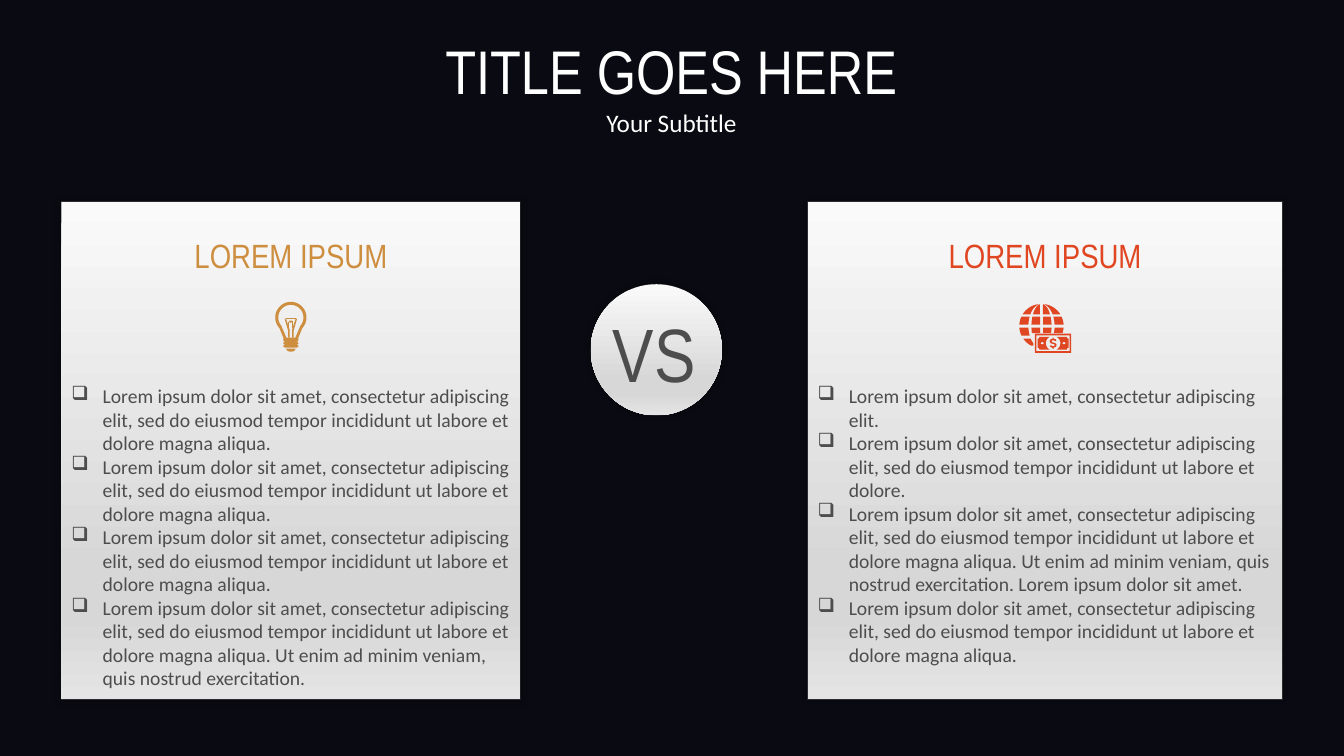
"""Builds a two-panel versus slide with icons and bullet lists."""
import math

from lxml import etree
from pptx import Presentation
from pptx import util as u
from pptx.dml.color import RGBColor
from pptx.enum import shapes, text
from pptx.oxml.ns import qn

COLORS = {"back": "0A0A12", "white": "FFFFFF", "black": "000000", "grey": "4D4D4D",
          "gold": "CE8E40", "red": "E04621"}
SHADES = [(0, "FAFAFA"), (74, "D7D7D7"), (83, "D7D7D7"), (100, "E4E4E4")]
HEAD, BODY = "Arial Narrow", "Calibri"
SIDES = (-1, 1)

SHORT = "Lorem ipsum dolor sit amet, consectetur adipiscing elit"
MEDIUM = SHORT + ", sed do eiusmod tempor incididunt ut labore et dolore"
LONG = MEDIUM + " magna aliqua."
LONGER = LONG + " Ut enim ad minim veniam, quis nostrud exercitation."


def arc(cx, cy, rx, ry, start=0, end=360, steps=32):
    angles = [math.radians(start + (end - start) * i / steps) for i in range(steps + 1)]
    return [(cx + rx * math.cos(a), cy + ry * math.sin(a)) for a in angles]


def box(cx, cy, w, h):
    return [(cx - w, cy - h), (cx + w, cy - h), (cx + w, cy + h), (cx - w, cy + h)]


def bulb():
    right = [(0.75, 2), (0.75, 2.3), (0.6, 2.4), (0.75, 2.5), (0.75, 2.6),
             (0.6, 2.7), (0.75, 2.8), (0.75, 2.9), (0.55, 3)]
    left = [(-x, y) for x, y in reversed(right)]
    glass = arc(0, 0, 1.55, 1.55, 137, 403) + right + left
    hollow = arc(0, 0, 1.25, 1.25, 140, 400) + [(0.45, 2), (-0.45, 2)]
    wire = [(0.62, 0.1), (0.48, 0.1), (0.12, 1.2), (0.12, 2), (0.28, 2), (0.28, 1.3)]
    stem = [(0.14, 0.4), (0.24, 0.4), (0.24, 1), (0.14, 1)]
    pieces = [[glass, hollow], [arc(0, 3.1, 0.45, 0.3, 0, 180)],
              [arc(0, 0.4, 0.2, 0.1)], [box(0, 0.12, 0.5, 0.05)]]
    return pieces + [[[(side * x, y) for x, y in part]]
                     for side in SIDES for part in (wire, stem)]


def globe_cell(top, bottom, side, outer, limit=9):
    ys = [top + (bottom - top) * i / 12 for i in range(13)]
    bend = [math.sqrt(1 - (y / 2.2) ** 2) for y in ys]
    near = [1.3 * b if outer else 0.15 for b in bend]
    far = [(2.2 if outer else 1) * b for b in bend]
    edge = list(zip(near, ys)) + list(zip(far, ys))[::-1]
    return [[(min(side * x, limit), y) for x, y in edge]]


def globe_and_bill():
    pieces = [globe_cell(top, 0.95 if top > 0 and outer and side < 0 else bottom, side, outer)
              for top, bottom in ((-2.15, -1.15), (-0.95, -0.15), (0.15, 0.7))
              for side in SIDES for outer in (False, True)]
    pieces.append(globe_cell(1.25, 1.95, -1, True, -0.8))
    cx, cy = 1.15, 1.7
    pieces.append([box(cx, cy, 1.8, 0.95), box(cx, cy, 1.65, 0.78)])
    pane = (arc(0, 0, 0.72, 0.72, -62, 62) + [(1.35, 0.64)]
            + arc(1.53, 0.62, 0.17, 0.17, 180, 270, 6)
            + arc(1.53, -0.62, 0.17, 0.17, 90, 180, 6) + [(1.35, -0.64)])
    for side in SIDES:
        pieces.append([[(cx + side * x, cy + y) for x, y in part]
                       for part in (pane, arc(1.08, 0, 0.15, 0.11))])
    half = [(0.05, -0.55), (0.05, -0.45), (0.25, -0.4), (0.32, -0.25), (0.2, -0.2),
            (0.1, -0.28), (-0.1, -0.28), (-0.16, -0.18), (-0.1, -0.1), (0.2, -0.02),
            (0.34, 0.12)]
    lower = [(0.3, 0.35), (0.05, 0.45), (0.05, 0.55)]
    dollar = half + lower
    dollar += [(-x, -y) for x, y in dollar]
    pieces.append([[(cx + x, cy + y) for x, y in dollar]])
    return pieces


class Deck:
    """Holds the style and the current slide; lengths are grid cells of a tenth of an inch."""

    def __init__(self):
        self.prs = Presentation()
        self.prs.slide_width, self.prs.slide_height = u.Inches(13.33), u.Inches(7.5)
        self.s = self.prs.slides.add_slide(self.prs.slide_layouts[5])
        fill = self.s.background.fill
        fill.solid()
        fill.fore_color.rgb = self.color("back")

    def color(self, name):
        return RGBColor.from_string(COLORS[name])

    def cells(self, *values):
        return [u.Inches(v / 10) for v in values]

    def style(self, p, font, size, color, align=text.PP_ALIGN.CENTER):
        p.alignment = align
        for r in p.runs:
            r.font.name, r.font.size = font, u.Pt(size)
            r.font.color.rgb = self.color(color)

    def title(self, x, y, w, h, title, subtitle):
        sp = self.s.shapes.title
        sp.left, sp.top, sp.width, sp.height = self.cells(x, y, w, h)
        tf = sp.text_frame
        tf.text = title + "\n" + subtitle
        tf.vertical_anchor = text.MSO_ANCHOR.TOP
        tf.auto_size = text.MSO_AUTO_SIZE.NONE
        self.style(tf.paragraphs[0], HEAD, 44, "white")
        self.style(tf.paragraphs[1], BODY, 18, "white")

    def plate(self, kind, x, y, w, h):
        sp = self.s.shapes.add_shape(kind, *self.cells(x, y, w, h))
        sp.fill.gradient()
        sp.fill.gradient_angle = 270
        spPr = sp._element.spPr
        stops = spPr.find(".//" + qn("a:gsLst"))
        for stop in list(stops):
            stops.remove(stop)
        for pos, shade in SHADES:
            stop = etree.SubElement(stops, qn("a:gs"), pos=str(pos * 1000))
            etree.SubElement(stop, qn("a:srgbClr"), val=shade)
        sp.line.width = u.Pt(0.5)
        sp.line.color.rgb = self.color("white")
        line = spPr.find(qn("a:ln")).find(".//" + qn("a:srgbClr"))
        etree.SubElement(line, qn("a:alpha"), val="15000")
        sp.shadow.inherit = False
        shadow = etree.SubElement(spPr.find(qn("a:effectLst")), qn("a:outerShdw"),
                                  blurRad=str(u.Pt(5)), dist="0", dir="0",
                                  algn="ctr", rotWithShape="0")
        tint = etree.SubElement(shadow, qn("a:srgbClr"), val=COLORS["black"])
        etree.SubElement(tint, qn("a:alpha"), val="40000")

    def frame(self, x, y, w, h, words):
        tf = self.s.shapes.add_textbox(*self.cells(x, y, w, h)).text_frame
        tf.word_wrap = True
        tf.auto_size = text.MSO_AUTO_SIZE.SHAPE_TO_FIT_TEXT
        tf.text = words
        return tf

    def label(self, x, y, w, h, words, size, color):
        self.style(self.frame(x, y, w, h, words).paragraphs[0], HEAD, size, color)

    def bullets(self, x, y, w, h, items):
        for p in self.frame(x, y, w, h, "\n".join(items)).paragraphs:
            pPr = p._p.get_or_add_pPr()
            indent = u.Inches(0.31)
            pPr.set("marL", str(indent))
            pPr.set("indent", str(-indent))
            etree.SubElement(pPr, qn("a:buChar"), char="❑")
            self.style(p, BODY, 14, "grey", text.PP_ALIGN.LEFT)

    def icon(self, cx, cy, pieces, color):
        group = self.s.shapes.add_group_shape()
        for contours in pieces:
            paths = [[self.cells(cx + x, cy + y) for x, y in c] for c in contours]
            builder = group.shapes.build_freeform(*paths[0][0])
            builder.add_line_segments(paths[0][1:])
            for path_points in paths[1:]:
                builder.move_to(*path_points[0])
                builder.add_line_segments(path_points[1:])
            sp = builder.convert_to_shape()
            sp.fill.solid()
            sp.fill.fore_color.rgb = self.color(color)
            sp.line.fill.background()
            sp.shadow.inherit = False


def main():
    deck = Deck()
    panels = [
        (6.1, 45.5, "gold", bulb(), (28.85, 31.5), [LONG, LONG, LONG, LONGER]),
        (80.1, 47.1, "red", globe_and_bill(), (103.3, 32.35),
         [SHORT + ".", MEDIUM + ".", LONGER + " Lorem ipsum dolor sit amet.", LONG]),
    ]
    for x, w, color, pieces, centre, items in panels:
        deck.plate(shapes.MSO_SHAPE.RECTANGLE, x, 20, w, 49.4)
        deck.label(x, 22.8, w, 5, "LOREM IPSUM", 24, color)
        deck.bullets(x, 37.6, w, 31.6, items)
        deck.icon(*centre, pieces, color)
    deck.plate(shapes.MSO_SHAPE.OVAL, 58.6, 28.2, 13, 13)
    deck.label(54.9, 30, 20, 10.4, "VS", 54, "grey")
    deck.title(36.5, 2.8, 60.2, 11.4, "TITLE GOES HERE", "Your Subtitle")
    deck.prs.save("out.pptx")


if __name__ == "__main__":
    main()
